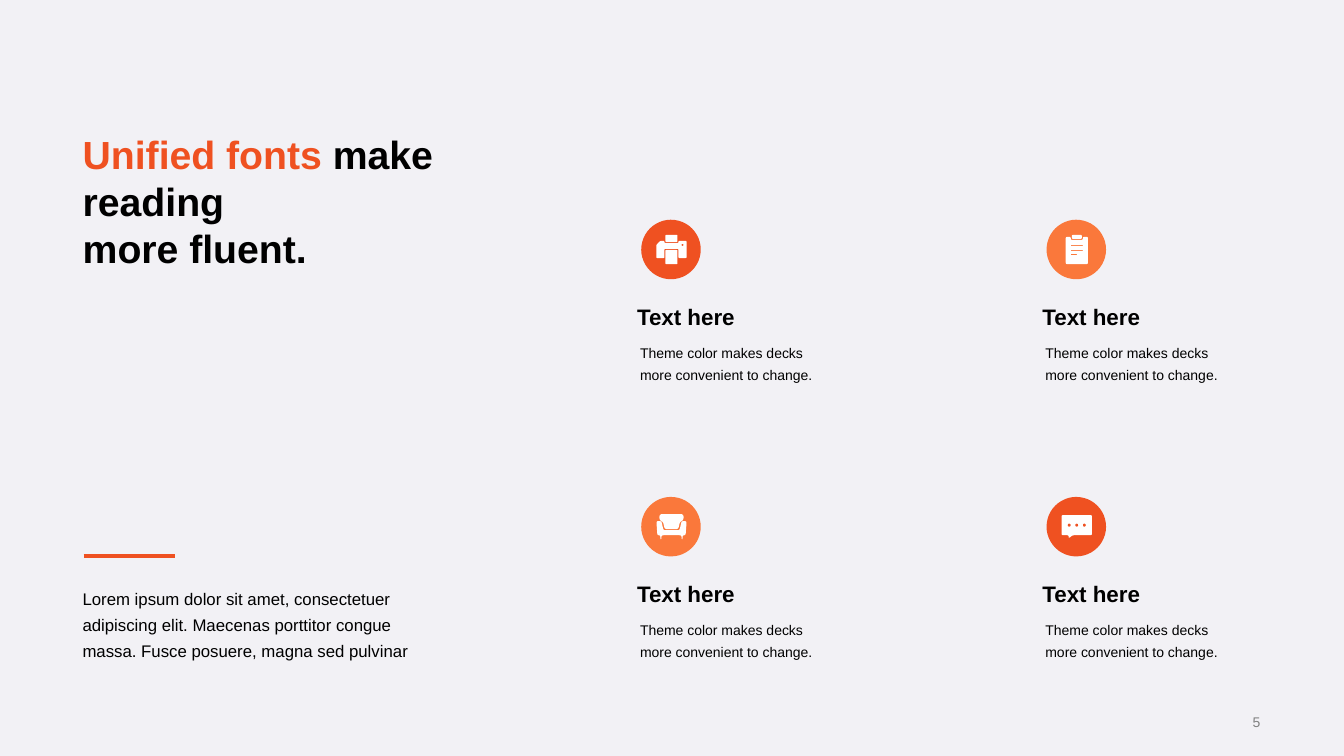
from dataclasses import dataclass
from math import hypot

from lxml.etree import SubElement
from pptx import Presentation
from pptx.dml.color import RGBColor as RGB
from pptx.enum.shapes import MSO_CONNECTOR as LINE, MSO_SHAPE as FORM
from pptx.enum.text import MSO_ANCHOR as ANCHOR, MSO_AUTO_SIZE as FIT, PP_ALIGN as ALIGN
from pptx.oxml.ns import qn
from pptx.util import Inches, Pt


@dataclass(frozen=True)
class Theme:
    font: str = "Arial"
    back: RGB = RGB(0xF2, 0xF1, 0xF5)
    red: RGB = RGB(0xEF, 0x51, 0x21)
    orange: RGB = RGB(0xFA, 0x78, 0x3B)
    white: RGB = RGB(0xFF, 0xFF, 0xFF)
    black: RGB = RGB(0, 0, 0)
    gray: RGB = RGB(0x80, 0x80, 0x80)
    title: int = 28
    head: int = 16
    body: int = 12
    small: int = 10


THEME = Theme()


def box(left, top, wide, high):
    right, base = left + wide, top + high
    return [(left, top), (right, top), (right, base), (left, base)]


PRINTER = [
    (1, box(24, 30, 12, 14)),
    (1, [(23, 21), (23, 23), (37, 23), (37, 21), (45, 21), (45, 38), (37, 38),
         (37, 29), (23, 29), (23, 38), (15, 38), (15, 25), (19, 21)]),
    (1, box(40, 24, 2, 2)),
    (1, box(24, 15, 12, 7)),
]
BOARD = [
    (1.5, [(24, 17), (24, 20), (36, 20), (36, 17), (41, 17), (41, 44), (19, 44), (19, 17)]),
    (0, box(24, 34, 6, 1)),
    (0, box(24, 30, 12, 1)),
    (0, box(24, 25, 12, 1)),
    (1.5, box(25, 15, 10, 4)),
]
SOFA = [
    (2, [(15, 24), (20, 24), (22, 33), (38, 33), (40, 24), (45, 24), (44, 38), (41, 38),
         (41, 42), (40, 42), (40, 38), (20, 38), (20, 42), (19, 42), (19, 38), (16, 38)]),
    (3, [(18, 17), (42, 17), (42, 23), (38, 25), (37, 32), (23, 32), (22, 25), (18, 23)]),
]
CHAT = [
    (1.5, [(15, 18), (45, 18), (45, 38), (26, 38), (22, 41), (22, 38), (15, 38)]),
    *[(1.5, box(left, 26.5, 3, 3)) for left in (21, 28.5, 36)],
]

CARDS = [
    (PRINTER, THEME.red),
    (BOARD, THEME.orange),
    (SOFA, THEME.orange),
    (CHAT, THEME.red),
]


def toward(start, end, reach):
    span = hypot(end[0] - start[0], end[1] - start[1])
    part = min(reach / span, 0.5)
    return tuple(a + (b - a) * part for a, b in zip(start, end))


def soften(points, reach):
    curve = []
    for i, point in enumerate(points):
        first = toward(point, points[i - 1], reach)
        last = toward(point, points[(i + 1) % len(points)], reach)
        for t in (0, 0.25, 0.5, 0.75, 1):
            curve.append(tuple(
                round(100 * ((1 - t) ** 2 * a + 2 * t * (1 - t) * b + t * t * c))
                for a, b, c in zip(first, point, last)))
    return curve


def paint(shape, color):
    shape.fill.solid()
    shape.fill.fore_color.rgb = color
    shape.line.fill.background()
    shape.shadow.inherit = False


def style(run, size, color, bold=False):
    run.font.name = THEME.font
    run.font.size = Pt(size)
    run.font.bold = bold
    run.font.color.rgb = color


def frame(shape, anchor=ANCHOR.TOP):
    text = shape.text_frame
    text.word_wrap = True
    text.auto_size = FIT.NONE
    text.vertical_anchor = anchor
    return text


def write(slide, place, words, size, color=THEME.black, bold=False,
          anchor=ANCHOR.TOP, align=ALIGN.LEFT, space=1.0):
    text = frame(slide.shapes.add_textbox(*map(Inches, place)), anchor)
    text.text = words
    line = text.paragraphs[0]
    line.alignment = align
    line.line_spacing = space
    style(line.runs[0], size, color, bold)


def badge(slide, left, top, icon, color):
    group = slide.shapes.add_group_shape()
    x, y, side = Inches(left), Inches(top), Inches(0.59)
    disc = group.shapes.add_shape(FORM.ROUNDED_RECTANGLE, x, y, side, side)
    disc.adjustments[0] = 0.5
    paint(disc, color)
    paths = [soften(points, reach) for reach, points in icon]
    pen = group.shapes.build_freeform(*paths[0][0], scale=Inches(1) / 10000)
    for i, path in enumerate(paths):
        if i:
            pen.move_to(*path[0])
        pen.add_line_segments(path[1:], close=True)
    paint(pen.convert_to_shape(x, y), THEME.white)


def card(slide, left, top, icon, color):
    badge(slide, left + 0.14, top, icon, color)
    write(slide, (left, top + 0.77, 1.93, 0.37), "Text here", THEME.head,
          bold=True, anchor=ANCHOR.BOTTOM)
    write(slide, (left + 0.03, top + 1.14, 1.93, 0.52),
          "Theme color makes decks more convenient to change.", THEME.small, space=1.3)


def grid(slide, left, top):
    for i, (icon, color) in enumerate(CARDS):
        row, col = divmod(i, 2)
        card(slide, left + col * 4.02, top + row * 2.75, icon, color)


def intro(slide, left, top):
    title = slide.shapes.title
    title.left, title.top, title.width, title.height = map(Inches, (left, top, 4.2, 1.51))
    text = frame(title)
    text.text = "Unified fonts \nmore fluent."
    text.paragraphs[0].add_run().text = "make reading"
    for line in text.paragraphs:
        line.alignment = ALIGN.LEFT
        for run in line.runs:
            style(run, THEME.title, THEME.black, True)
    text.paragraphs[0].runs[0].font.color.rgb = THEME.red

    level = Inches(top + 4.28)
    rule = slide.shapes.add_connector(
        LINE.STRAIGHT, Inches(left + 0.11), level, Inches(left + 1.02), level)
    rule.line.color.rgb = THEME.red
    rule.line.width = Pt(3)
    SubElement(rule._element.spPr, qn("a:effectLst"))

    write(slide, (left, top + 4.49, 3.69, 0.86),
          "Lorem ipsum dolor sit amet, consectetuer adipiscing elit. "
          "Maecenas porttitor congue massa. Fusce posuere, magna sed pulvinar",
          THEME.body, space=1.3)


def main():
    deck = Presentation()
    deck.slide_width, deck.slide_height = Inches(13.33), Inches(7.5)
    slide = deck.slides.add_slide(deck.slide_layouts[5])
    slide.background.fill.solid()
    slide.background.fill.fore_color.rgb = THEME.back
    intro(slide, 0.72, 1.24)
    grid(slide, 6.22, 2.18)
    write(slide, (9.69, 7.04, 2.91, 0.24), "5", THEME.small, THEME.gray,
          anchor=ANCHOR.MIDDLE, align=ALIGN.RIGHT)
    deck.save("out.pptx")


if __name__ == "__main__":
    main()
